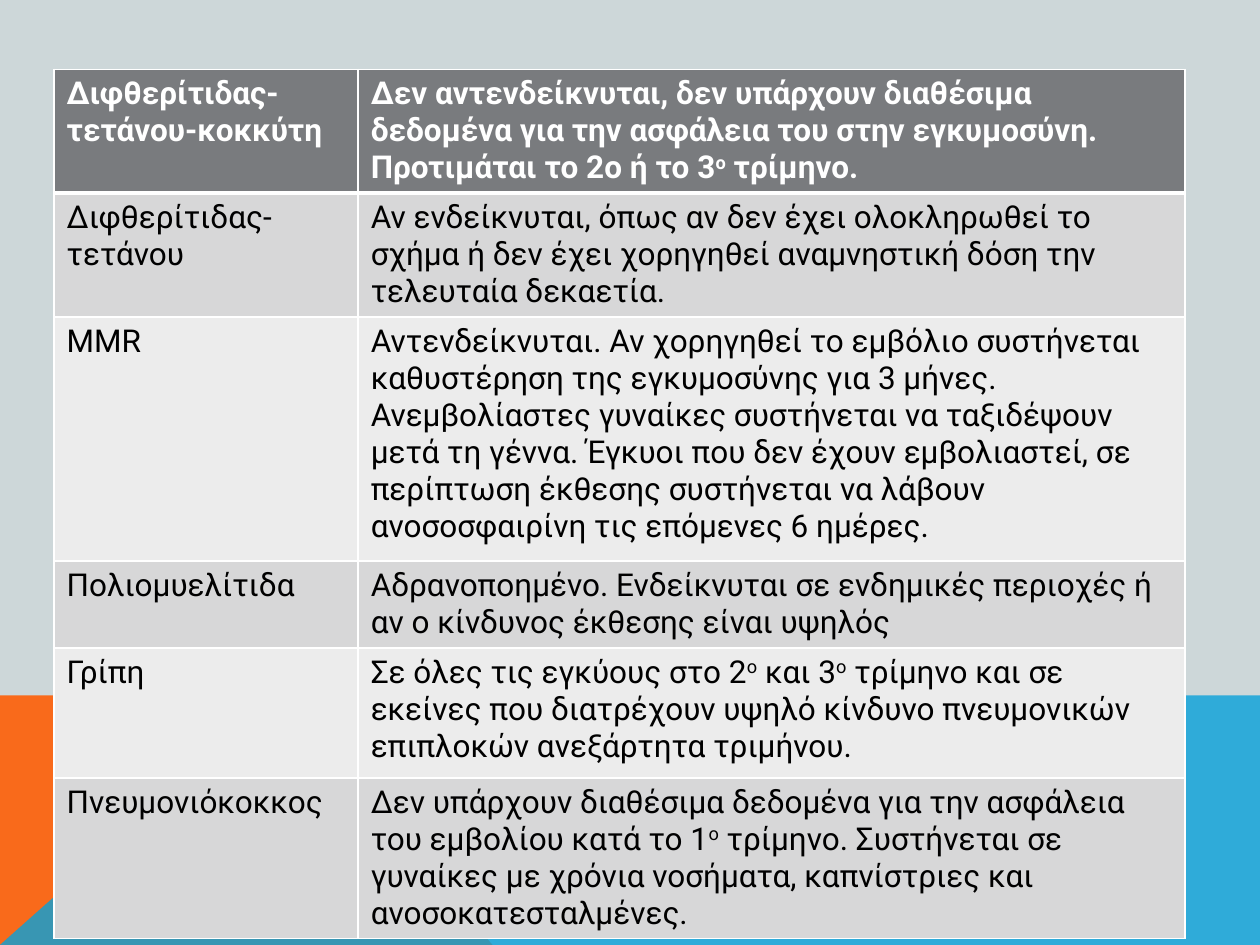
import pptx
import pptx.util
import pptx.dml.color
import pptx.oxml
import pptx.oxml.ns
from lxml import etree

Cm = pptx.util.Cm
Pt = pptx.util.Pt
qn = pptx.oxml.ns.qn

HUES = {
    "back": "CDD7D9", "orange": "F96A1B", "blue": "08A1D9",
    "head": "797B7E", "dark": "D7D7D8", "light": "ECECEC",
    "white": "FFFFFF", "black": "000000",
}
FONT = "Roboto"
COLS = [6.13, 16.67]
ROWS = [
    (2.47, "Διφθερίτιδας-τετάνου-κοκκύτη",
     "Δεν αντενδείκνυται, δεν υπάρχουν διαθέσιμα δεδομένα για την ασφάλεια του "
     "στην εγκυμοσύνη. Προτιμάται το 2ο ή το 3^ο^ τρίμηνο."),
    (2.5, "Διφθερίτιδας-τετάνου",
     "Αν ενδείκνυται, όπως αν δεν έχει ολοκληρωθεί το σχήμα ή δεν έχει "
     "χορηγηθεί αναμνηστική δόση την τελευταία δεκαετία."),
    (4.92, "MMR",
     "Αντενδείκνυται. Αν χορηγηθεί το εμβόλιο συστήνεται καθυστέρηση της "
     "εγκυμοσύνης για 3 μήνες. Ανεμβολίαστες γυναίκες συστήνεται να ταξιδέψουν "
     "μετά τη γέννα. Έγκυοι που δεν έχουν εμβολιαστεί, σε περίπτωση έκθεσης "
     "συστήνεται να λάβουν ανοσοσφαιρίνη τις επόμενες 6 ημέρες."),
    (1.75, "Πολιομυελίτιδα",
     "Αδρανοποημένο. Ενδείκνυται σε ενδημικές περιοχές ή αν ο κίνδυνος έκθεσης "
     "είναι υψηλός"),
    (2.62, "Γρίπη",
     "Σε όλες τις εγκύους στο 2^ο^ και 3^ο^ τρίμηνο και σε εκείνες που "
     "διατρέχουν υψηλό κίνδυνο πνευμονικών επιπλοκών ανεξάρτητα τριμήνου."),
    (3.23, "Πνευμονιόκοκκος",
     "Δεν υπάρχουν διαθέσιμα δεδομένα για την ασφάλεια του εμβολίου κατά το "
     "1^ο^ τρίμηνο. Συστήνεται σε γυναίκες με χρόνια νοσήματα, καπνίστριες και "
     "ανοσοκατεσταλμένες."),
]


def tint(fill, hue):
    fill.solid()
    fill.fore_color.rgb = pptx.dml.color.RGBColor.from_string(HUES[hue])


def draw_band(slide, left, top, width, height):
    peak, foot = 5.66, 9.93
    parts = [
        ("orange", 100, [(0, height), (0, 0), (peak, 0), (foot, height)]),
        ("blue", 80, [(0, height), (peak, 0), (width, 0), (width, height)]),
    ]
    for hue, alpha, spots in parts:
        spots = [(Cm(left + x), Cm(top + y)) for x, y in spots]
        pen = slide.shapes.build_freeform(*spots[0])
        pen.add_line_segments(spots[1:], close=True)
        shape = pen.convert_to_shape()
        shape.shadow.inherit = False
        shape.line.fill.background()
        tint(shape.fill, hue)
        if alpha < 100:
            color = shape.fill._xPr.find(".//" + qn("a:srgbClr"))
            etree.SubElement(color, qn("a:alpha"), val=str(alpha * 1000))


def edge_cell(cell, row):
    props = cell._tc.get_or_add_tcPr()
    thick = {"T": 3 if row == 1 else 1, "B": 3 if row == 0 else 1}
    for side in "LRTB":
        line = etree.SubElement(props, qn("a:ln" + side),
                                w=str(Pt(thick.get(side, 1))))
        fill = etree.SubElement(line, qn("a:solidFill"))
        etree.SubElement(fill, qn("a:srgbClr"), val=HUES["white"])


def fill_cell(cell, text, row):
    edge_cell(cell, row)
    tint(cell.fill, "head" if row == 0 else "dark" if row % 2 else "light")
    para = cell.text_frame.paragraphs[0]
    para.font.name = FONT
    para.font.size = Pt(18)
    para.font.bold = row == 0
    tint(para.font.fill, "black" if row else "white")
    for i, part in enumerate(text.split("^")):
        run = para.add_run()
        run.text = part
        if i % 2:
            run._r.get_or_add_rPr().set("baseline", "30000")


def draw_table(slide, left, top):
    high = sum(row[0] for row in ROWS)
    frame = slide.shapes.add_table(len(ROWS), len(COLS), Cm(left), Cm(top),
                                   Cm(sum(COLS)), Cm(high))
    table = frame.table
    for col, width in zip(table.columns, COLS):
        col.width = Cm(width)
    for r, (height, *texts) in enumerate(ROWS):
        table.rows[r].height = Cm(height)
        for c, text in enumerate(texts):
            fill_cell(table.cell(r, c), text, r)


def main():
    deck = pptx.Presentation()
    deck.slide_width, deck.slide_height = Cm(25.4), Cm(19.05)
    slide = deck.slides.add_slide(deck.slide_layouts[6])
    tint(slide.background.fill, "back")
    draw_band(slide, 0, 14.02, 25.4, 5.03)
    draw_table(slide, 1.09, 1.4)
    deck.save("out.pptx")


if __name__ == "__main__":
    main()
